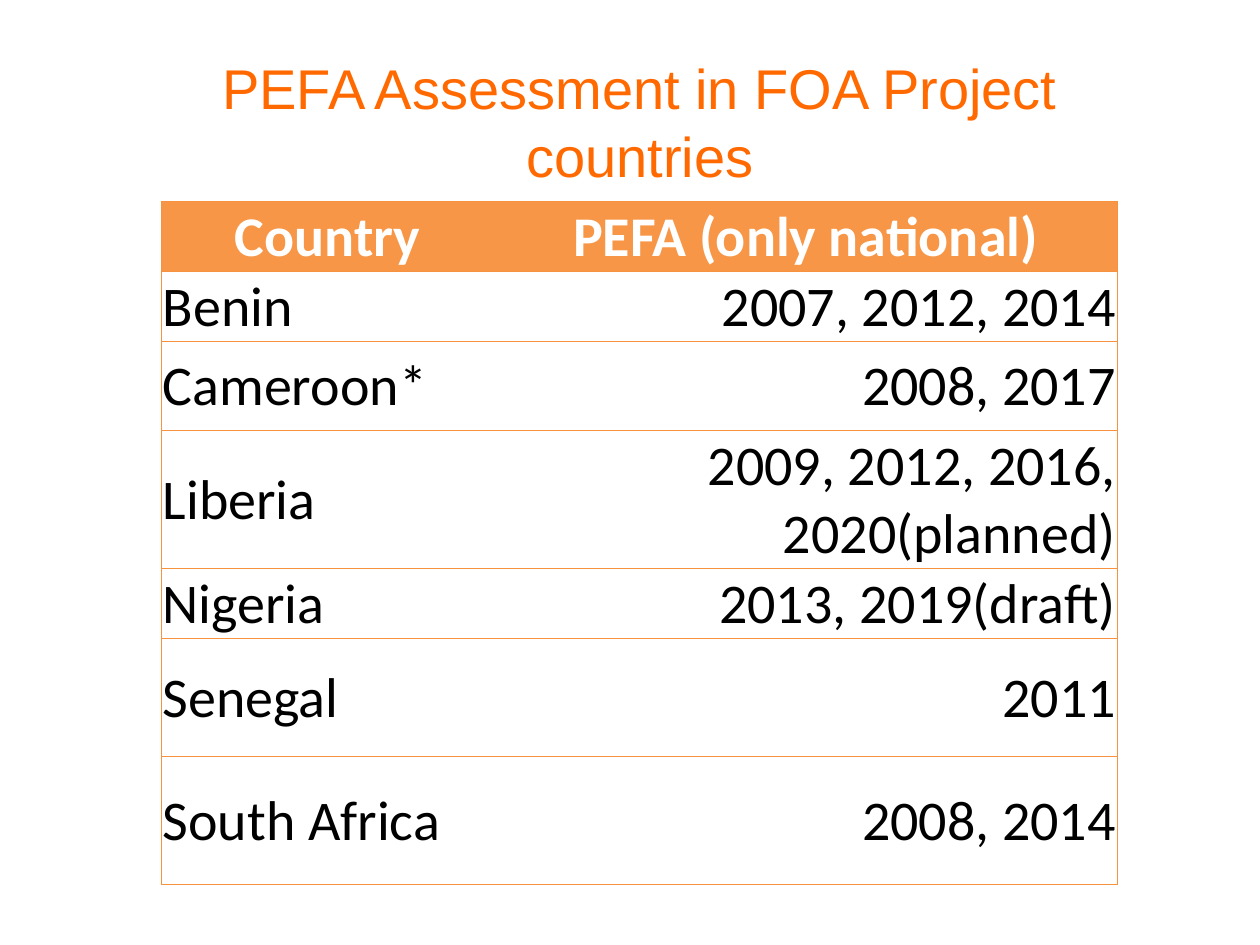
from dataclasses import dataclass

from lxml import etree
from pptx import Presentation
from pptx.dml.color import RGBColor
from pptx.enum import text
from pptx.oxml import ns
from pptx.util import Cm, Pt


@dataclass(frozen=True)
class Theme:
    """Hold the colours, fonts and sizes of the slide."""
    title: str = "FF6900"
    header: str = "F79646"
    rule: str = "F69240"
    light: str = "FFFFFF"
    dark: str = "000000"
    title_font: str = "Arial"
    table_font: str = "Calibri"
    size: int = 32
    rule_width: float = 0.75


THEME = Theme()
LEFT, CENTER, RIGHT = (text.PP_ALIGN.LEFT, text.PP_ALIGN.CENTER, text.PP_ALIGN.RIGHT)
ROWS = [
    ("Country", "PEFA (only national)", 1.37),
    ("Benin", "2007, 2012, 2014", 1.37),
    ("Cameroon*", "2008, 2017", 1.79),
    ("Liberia", "2009, 2012, 2016, 2020(planned)", 2.74),
    ("Nigeria", "2013, 2019(draft)", 1.37),
    ("Senegal", "2011", 2.38),
    ("South Africa", "2008, 2014", 2.57),
]
COLUMN_SHARES = (0.348, 0.652)


def write(frame, words, *, font, color, align, bold=False):
    """Put formatted words into a text frame."""
    paragraph = frame.paragraphs[0]
    paragraph.alignment = align
    run = paragraph.add_run()
    run.text = words
    run.font.name = font
    run.font.size = Pt(THEME.size)
    run.font.bold = bold
    run.font.color.rgb = RGBColor.from_string(color)


def add_borders(cell, sides):
    """Rule the given sides of a cell and clear the others."""
    properties = cell._tc.get_or_add_tcPr()
    for side in "LRTB":
        line = etree.SubElement(properties, ns.qn(f"a:ln{side}"), w=str(Pt(THEME.rule_width)))
        if side in sides:
            fill = etree.SubElement(line, ns.qn("a:solidFill"))
            etree.SubElement(fill, ns.qn("a:srgbClr"), val=THEME.rule)
        else:
            etree.SubElement(line, ns.qn("a:noFill"))


def add_title(slide, left, top, width, height):
    """Place the slide title in the given box."""
    title = slide.shapes.title
    title.left, title.top, title.width, title.height = left, top, width, height
    title.text_frame.vertical_anchor = text.MSO_ANCHOR.MIDDLE
    write(title.text_frame, "PEFA Assessment in FOA Project countries",
          font=THEME.title_font, color=THEME.title, align=CENTER)


def format_cell(cell, words, *, is_header, is_first):
    """Fill, rule and write one table cell."""
    cell.margin_left = cell.margin_right = cell.margin_top = Cm(0.03)
    cell.margin_bottom = 0
    cell.vertical_anchor = text.MSO_ANCHOR.MIDDLE
    add_borders(cell, "LTB" if is_first else "RTB")
    cell.fill.solid()
    cell.fill.fore_color.rgb = RGBColor.from_string(THEME.header if is_header else THEME.light)
    body_align = LEFT if is_first else RIGHT
    write(cell.text_frame, words, font=THEME.table_font, bold=is_header,
          color=THEME.light if is_header else THEME.dark,
          align=CENTER if is_header else body_align)


def add_assessments(slide, left, top, width, height):
    """Place the table of assessment years in the given box."""
    table = slide.shapes.add_table(len(ROWS), len(COLUMN_SHARES), left, top, width, height).table
    table.horz_banding = False
    for column, share in zip(table.columns, COLUMN_SHARES):
        column.width = int(width * share)
    for index, (country, years, row_height) in enumerate(ROWS):
        table.rows[index].height = Cm(row_height)
        for position, words in enumerate((country, years)):
            format_cell(table.cell(index, position), words,
                        is_header=index == 0, is_first=position == 0)


def main():
    """Build and save the presentation."""
    presentation = Presentation()
    presentation.slide_width, presentation.slide_height = Cm(25.4), Cm(19.05)
    slide = presentation.slides.add_slide(presentation.slide_layouts[5])
    add_title(slide, Cm(2.79), Cm(0.94), Cm(20.22), Cm(3))
    add_assessments(slide, Cm(3.25), Cm(4.06), Cm(19.28), Cm(sum(row[2] for row in ROWS)))
    presentation.save("out.pptx")


if __name__ == "__main__":
    main()
